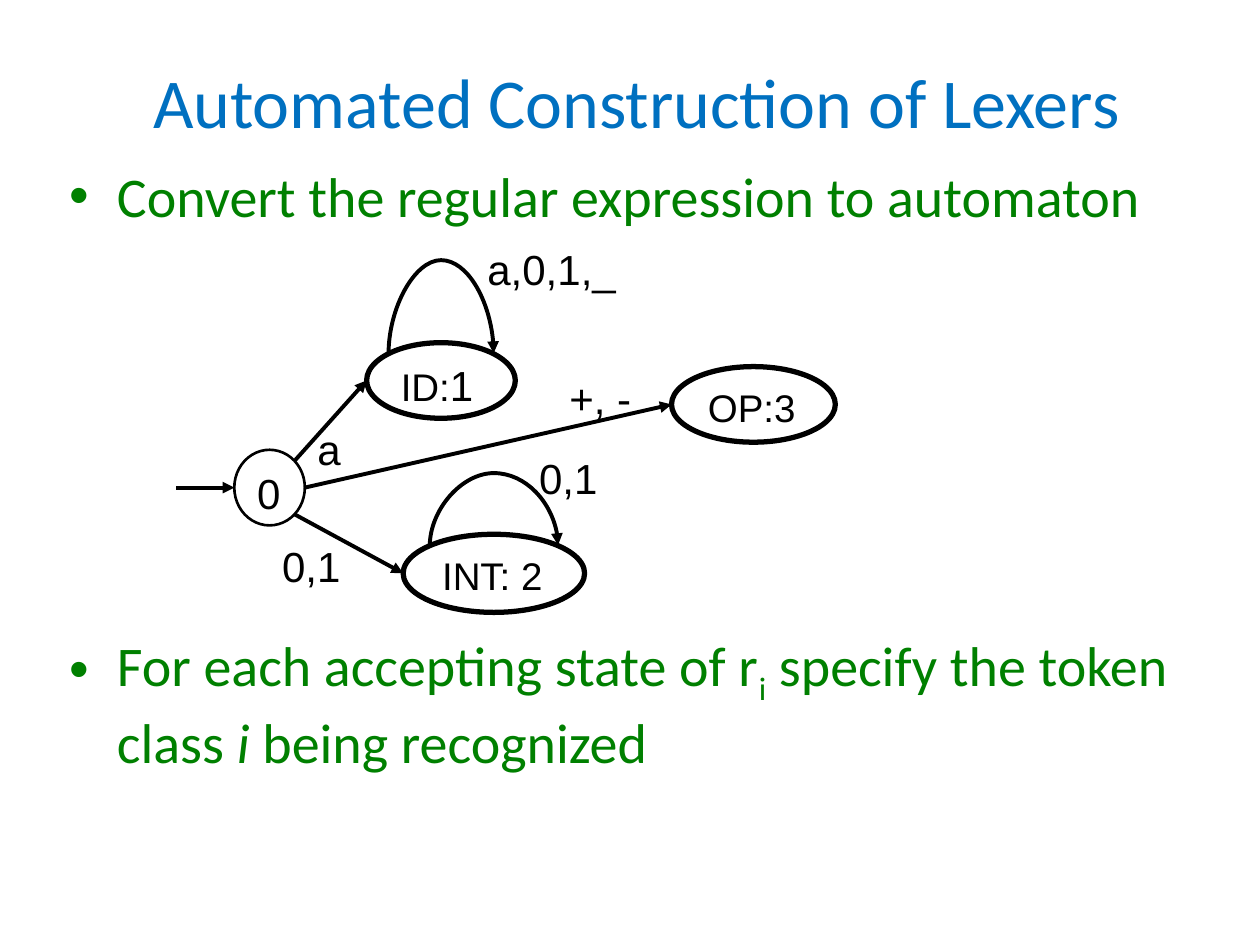
from math import cos, radians, sin

from pptx import Presentation
from pptx.dml.color import RGBColor
from pptx.enum.shapes import MSO_CONNECTOR as Link, MSO_SHAPE as Shape
from pptx.enum.text import MSO_ANCHOR as Anchor, PP_ALIGN as Align
from pptx.oxml.ns import qn
from pptx.util import Inches, Pt
from lxml.etree import SubElement

COLORS = {"title": "0070C0", "body": "008000", "ink": "000000", "paper": "FFFFFF"}
COLUMNS, ROWS = 100, 75

TITLE = ("Automated Construction of Lexers", (4.8, 1.7, 91.4, 12.5))
BODY_AREA = (4.5, 12.3, 92.3, 53.6)
BULLETS = [
    (0, [("Convert the regular expression to automaton", "")]),
    (230, [("For each accepting state of r", ""), ("i", "sub"),
           (" specify the token class ", ""), ("i", "italic"),
           (" being recognized", "")]),
]
STATES = {
    "start": ((18.6, 35.7, 5.6, 6), [("0", 24)], 1.5, None),
    "id": ((29.1, 27.2, 11.8, 6), [("ID:", 22), ("1", 24)], 3, "paper"),
    "int": ((32, 42.4, 14.4, 6.2), [("INT: 2", 22)], 3, "paper"),
    "op": ((53.3, 29.1, 13, 6), [("OP:3", 22)], 3, "paper"),
}
EDGES = [("start", -45, "id"), ("start", 0, "op"), ("start", 45, "int")]
ENTRY_LENGTH = 4.6
LOOPS = [("id", 7.6), ("int", 5.9)]
LOOP_GAP = 0.1
LABELS = [
    ("a", (24.2, 33.1, 3.9, 5)),
    ("a,0,1,_", (37.7, 18.8, 13.2, 5)),
    ("0,1", (21.4, 42.4, 6.7, 5)),
    ("0,1", (41.8, 35.4, 6.7, 5)),
    ("+, -", (44.2, 29.1, 7, 5)),
]

deck = Presentation()
deck.slide_width, deck.slide_height = Inches(10), Inches(7.5)
page = deck.slides.add_slide(deck.slide_layouts[6])


def place(*cells):
    sizes = (deck.slide_width / COLUMNS, deck.slide_height / ROWS)
    return [round(cell * sizes[i % 2]) for i, cell in enumerate(cells)]


def color(name):
    return RGBColor.from_string(COLORS[name])


def style(font, size, name, shade):
    font.size, font.name = Pt(size), name
    font.color.rgb = color(shade)


def add_text(text, area, size, name, shade, wrap):
    box = page.shapes.add_textbox(*place(*area))
    box.text_frame.word_wrap = wrap
    para = box.text_frame.paragraphs[0]
    para.text = text
    style(para.font, size, name, shade)
    return box


def add_bullets():
    frame = page.shapes.add_textbox(*place(*BODY_AREA)).text_frame
    frame.word_wrap = True
    for index, (space, spans) in enumerate(BULLETS):
        para = frame.add_paragraph() if index else frame.paragraphs[0]
        para.space_before = Pt(space)
        style(para.font, 32, "Calibri", "body")
        props = para._p.get_or_add_pPr()
        props.set("marL", str(Inches(0.38)))
        props.set("indent", str(-Inches(0.38)))
        bullet_font = SubElement(props, qn("a:buFont"), typeface="Arial")
        bullet_font.addnext(props.makeelement(qn("a:buChar"), {"char": "•"}))
        props.append(props.find(qn("a:defRPr")))
        for text, kind in spans:
            span = para.add_run()
            span.text = text
            style(span.font, 32, "Calibri", "body")
            if kind == "italic":
                span.font.italic = True
            if kind == "sub":
                span.font._element.set("baseline", "-25000")


def add_state(area, spans, width, fill):
    state = page.shapes.add_shape(Shape.OVAL, *place(*area))
    state.shadow.inherit = False
    if fill:
        state.fill.solid()
        state.fill.fore_color.rgb = color(fill)
    else:
        state.fill.background()
    state.line.color.rgb = color("ink")
    state.line.width = Pt(width)
    state.text_frame.vertical_anchor = Anchor.TOP
    para = state.text_frame.paragraphs[0]
    para.alignment = Align.LEFT
    for text, size in spans:
        span = para.add_run()
        span.text = text
        style(span.font, size, "Arial", "ink")


def rim(name, angle):
    left, top, width, height = STATES[name][0]
    turn = radians(angle)
    return (left + width / 2 * (1 + cos(turn)), top + height / 2 * (1 + sin(turn)))


def add_arrow(start, end, kind=Link.STRAIGHT):
    arrow = page.shapes.add_connector(kind, *place(*start, *end))
    arrow.line.color.rgb = color("ink")
    arrow.line.width = Pt(2.25)
    SubElement(arrow.line._get_or_add_ln(), qn("a:tailEnd"), type="triangle")
    SubElement(arrow._element.spPr, qn("a:effectLst"))
    return arrow


def add_loop(name, rise):
    (left, y), (right, _) = rim(name, -135), rim(name, -45)
    x, half = (left + right) / 2, (right - left) / 2
    loop = add_arrow((x + LOOP_GAP / 2, y + half), (x - LOOP_GAP / 2, y - half), Link.CURVE)
    props = loop._element.spPr
    props.find(qn("a:xfrm")).set("rot", "5400000")
    guides = props.find(qn("a:prstGeom")).get_or_add_avLst()
    SubElement(guides, qn("a:gd"), name="adj1", fmla=f"val {round(rise / LOOP_GAP * 100000)}")


title = add_text(*TITLE, 40, "Calibri", "title", True)
title.text_frame.vertical_anchor = Anchor.MIDDLE
title.text_frame.paragraphs[0].alignment = Align.CENTER
add_bullets()
for state in STATES.values():
    add_state(*state)
entry_x, entry_y = rim("start", 180)
add_arrow((entry_x - ENTRY_LENGTH, entry_y), (entry_x, entry_y))
for source, angle, target in EDGES:
    add_arrow(rim(source, angle), rim(target, 180))
for loop in LOOPS:
    add_loop(*loop)
for text, area in LABELS:
    add_text(text, area, 24, "Arial", "ink", False)

deck.save("out.pptx")
